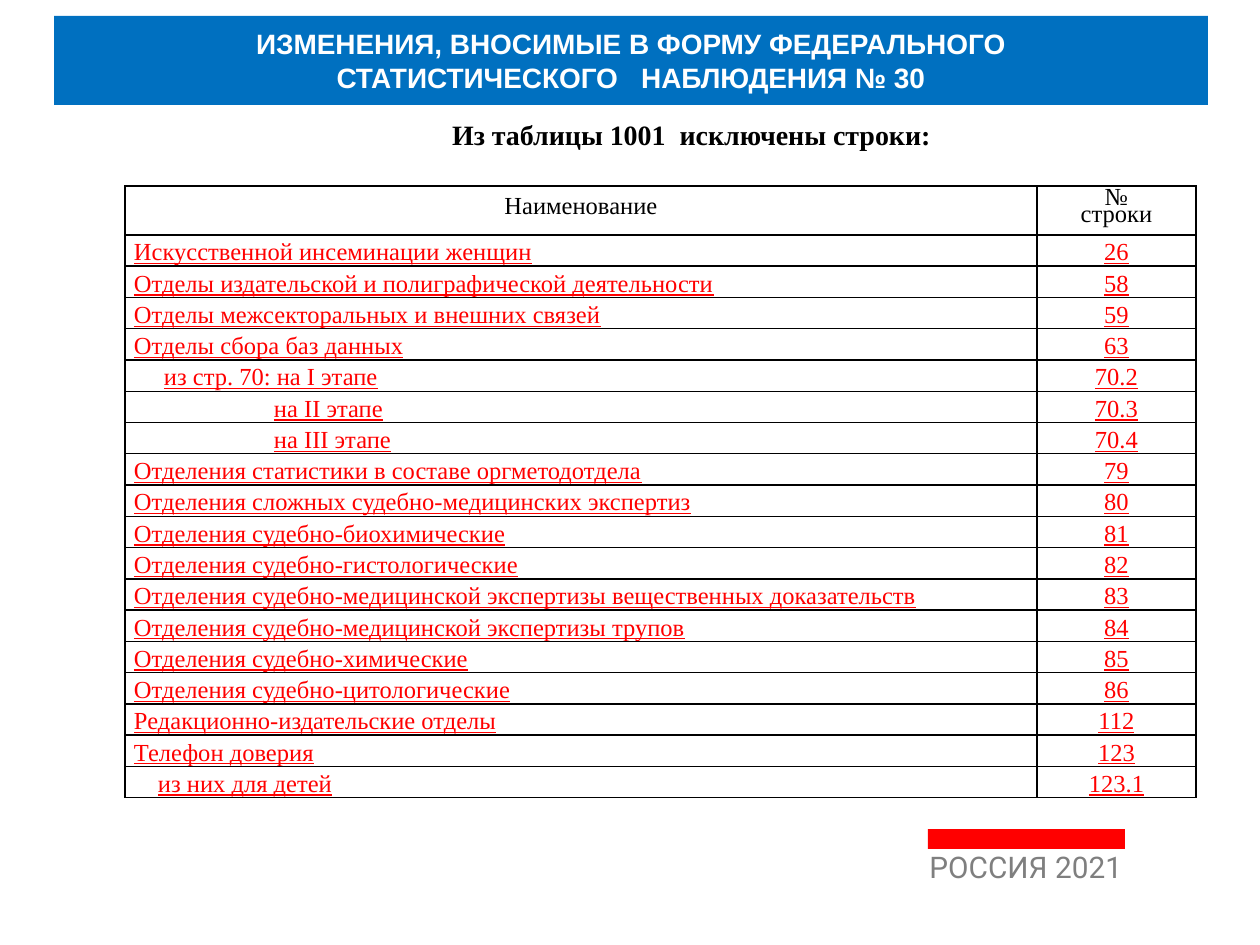
import pptx
import pptx.util
import pptx.dml.color
import pptx.enum.shapes
import pptx.enum.text
import pptx.oxml
import pptx.oxml.ns

PX = 914400 / 126
ALIGN = pptx.enum.text.PP_ALIGN
ANCHOR = pptx.enum.text.MSO_ANCHOR
THEME = {
    "blue": "0070C0", "red": "FF0000", "black": "000000",
    "white": "FFFFFF", "gray": "7F7F7F",
    "sans": "Arial", "serif": "Times New Roman", "brand": "Roboto",
    "heading": 16, "table": 14, "footer": 17,
}


def px(value):
    return pptx.util.Emu(round(value * PX))


def write(frame, text, *, font, size, color, bold=False, underline=False,
          align=ALIGN.CENTER, anchor=ANCHOR.MIDDLE, spacing=None):
    frame.word_wrap = True
    frame.vertical_anchor = anchor
    for number, line in enumerate(text.split("\n")):
        para = frame.paragraphs[0] if number == 0 else frame.add_paragraph()
        para.alignment = align
        para.line_spacing = spacing
        for index, part in enumerate(line.split("\v")):
            if index:
                para.add_line_break()
            span = para.add_run()
            span.text = part
            span.font.name = font
            span.font.size = pptx.util.Pt(size)
            span.font.bold = bold
            span.font.underline = underline
            span.font.color.rgb = pptx.dml.color.RGBColor.from_string(color)


deck = pptx.Presentation()
deck.slide_width, deck.slide_height = px(1260), px(945)
page = deck.slides.add_slide(deck.slide_layouts[6])

HEADERS = ["Наименование", "№\vстроки"]
ROWS = [
    ("Искусственной инсеминации женщин", "26", 0),
    ("Отделы издательской и полиграфической деятельности", "58", 0),
    ("Отделы межсекторальных и внешних связей", "59", 0),
    ("Отделы сбора баз данных", "63", 0),
    ("из стр. 70: на I этапе", "70.2", 30),
    ("на II этапе", "70.3", 140),
    ("на III этапе", "70.4", 140),
    ("Отделения статистики в составе оргметодотдела", "79", 0),
    ("Отделения сложных судебно-медицинских экспертиз", "80", 0),
    ("Отделения судебно-биохимические", "81", 0),
    ("Отделения судебно-гистологические", "82", 0),
    ("Отделения судебно-медицинской экспертизы вещественных доказательств", "83", 0),
    ("Отделения судебно-медицинской экспертизы трупов", "84", 0),
    ("Отделения судебно-химические", "85", 0),
    ("Отделения судебно-цитологические", "86", 0),
    ("Редакционно-издательские отделы", "112", 0),
    ("Телефон доверия", "123", 0),
    ("из них для детей", "123.1", 24),
]
TABLE_HEIGHT, HEADER_HEIGHT, COLUMN_WIDTHS = 612, 49, (912, 159)
CELL_MARGIN = 9

table = page.shapes.add_table(
    len(ROWS) + 1, 2, px(125), px(186), px(sum(COLUMN_WIDTHS)), px(TABLE_HEIGHT)).table
table.first_row = False
table.horz_banding = False
for column, width in zip(table.columns, COLUMN_WIDTHS):
    column.width = px(width)
for row in table.rows:
    row.height = px((TABLE_HEIGHT - HEADER_HEIGHT) / len(ROWS))
table.rows[0].height = px(HEADER_HEIGHT)

for cell in table.iter_cells():
    cell.margin_left = cell.margin_right = px(CELL_MARGIN)
    cell.margin_top = cell.margin_bottom = 0
    properties = cell._tc.get_or_add_tcPr()
    for side in ("lnL", "lnR", "lnT", "lnB"):
        properties.append(pptx.oxml.parse_xml(
            f'<a:{side} {pptx.oxml.ns.nsdecls("a")} w="12700"><a:solidFill>'
            f'<a:srgbClr val="{THEME["black"]}"/></a:solidFill></a:{side}>'))
    cell.fill.background()

for index, text in enumerate(HEADERS):
    cell = table.cell(0, index)
    cell.vertical_anchor = ANCHOR.MIDDLE
    write(cell.text_frame, text, font=THEME["serif"], size=THEME["table"],
          color=THEME["black"], spacing=pptx.util.Pt(10), anchor=None)

for number, (name, code, indent) in enumerate(ROWS, start=1):
    for index, (text, align) in enumerate([(name, ALIGN.LEFT), (code, ALIGN.CENTER)]):
        cell = table.cell(number, index)
        cell.vertical_anchor = ANCHOR.BOTTOM
        write(cell.text_frame, text, font=THEME["serif"], size=THEME["table"],
              color=THEME["red"], underline=True, align=align, anchor=None)
    table.cell(number, 0).margin_left = px(CELL_MARGIN + indent)

bars = []
for left, top, width, height, color in [
    (54, 16, 1154, 89, THEME["blue"]),
    (928, 829, 197, 20, THEME["red"]),
]:
    bar = page.shapes.add_shape(pptx.enum.shapes.MSO_SHAPE.RECTANGLE,
                                px(left), px(top), px(width), px(height))
    bar.shadow.inherit = False
    bar.fill.solid()
    bar.fill.fore_color.rgb = pptx.dml.color.RGBColor.from_string(color)
    bar.line.fill.background()
    bars.append(bar)

write(bars[0].text_frame,
      "ИЗМЕНЕНИЯ, ВНОСИМЫЕ В ФОРМУ ФЕДЕРАЛЬНОГО\nСТАТИСТИЧЕСКОГО   НАБЛЮДЕНИЯ № 30",
      font=THEME["sans"], size=THEME["heading"], color=THEME["white"], bold=True)

subtitle = page.shapes.add_textbox(px(123), px(99), px(1137), px(70))
write(subtitle.text_frame, "Из таблицы 1001  исключены строки:", font=THEME["serif"],
      size=THEME["heading"], color=THEME["black"], bold=True)

footer = page.shapes.add_textbox(px(917), px(849), px(237), px(59))
write(footer.text_frame, "РОССИЯ 2021", font=THEME["brand"], size=THEME["footer"],
      color=THEME["gray"], align=ALIGN.LEFT, anchor=ANCHOR.TOP, spacing=0.8)

deck.save("out.pptx")
